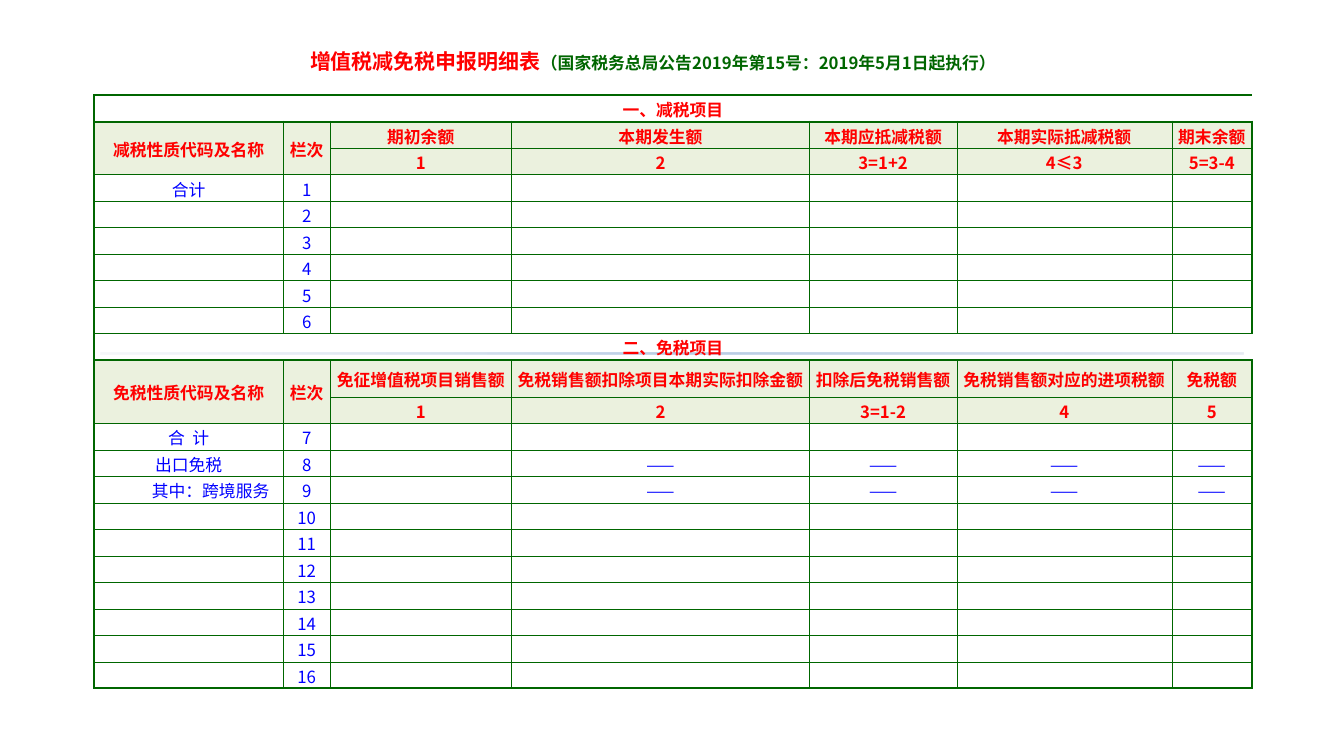
import pptx
import pptx.util
import pptx.dml.color
import pptx.enum.shapes
import pptx.enum.text
import pptx.oxml
import pptx.oxml.ns
from lxml import etree

TITLE = [
    ("增值税减免税申报明细表", "title", "red"),
    ("（国家税务总局公告2019年第15号：2019年5月1日起执行）", "body", "green"),
]
DASHES = ["", "——", "——", "——", "——"]
SECTIONS = [
    {
        "title": "一、减税项目",
        "labels": ["减税性质代码及名称", "栏次"],
        "heads": ["期初余额", "本期发生额", "本期应抵减税额", "本期实际抵减税额", "期末余额"],
        "formulas": ["1", "2", "3=1+2", "4≤3", "5=3-4"],
        "names": ["合计"],
        "values": {},
        "lines": range(1, 7),
    },
    {
        "title": "二、免税项目",
        "labels": ["免税性质代码及名称", "栏次"],
        "heads": ["免征增值税项目销售额", "免税销售额扣除项目本期实际扣除金额", "扣除后免税销售额",
                  "免税销售额对应的进项税额", "免税额"],
        "formulas": ["1", "2", "3=1-2", "4", "5"],
        "names": ["合  计", "出口免税", "其中：跨境服务"],
        "values": {8: DASHES, 9: DASHES},
        "lines": range(7, 17),
    },
]
INDENTS = {"其中：跨境服务": 44}

THEME = {
    "font": "Noto Sans CJK SC",
    "red": "FF0000", "green": "006600", "blue": "0000FF", "head": "EBF1DE",
    "rule": [(0, "D0D8E8", 20), (50, "4F81BD", 40), (100, "D0D8E8", 50)],
    "title": 15, "body": 12, "thin": 0.25, "thick": 1.5,
}

PX = 9080
SLIDE = (1343, 755)
RULE_BOX = (101, 352, 1142, 2)
TITLE_BOX = (236, 44, 833, 35)
TABLE_LEFT, TABLE_TOP, TABLE_HEIGHT = 94, 95, 593
COLUMNS = [189, 47, 181, 298, 147, 215, 80]
TALL_ROW = 37
MARGIN_X, MARGIN_TOP = 4, 2


def px(*lengths):
    return [pptx.util.Emu(round(n * PX)) for n in lengths]


def child(parent, tag, **attrs):
    return etree.SubElement(parent, pptx.oxml.ns.qn(tag), attrs)


def add_run(p, text, size, color, bold):
    r = p.add_run()
    r.text = text
    r.font.size = pptx.util.Pt(THEME[size])
    r.font.bold = bold
    r.font.color.rgb = pptx.dml.color.RGBColor.from_string(THEME[color])
    r.font.name = THEME["font"]
    child(r.font._element, "a:ea", typeface=THEME["font"])


def add_rule(s):
    sp = s.shapes.add_shape(pptx.enum.shapes.MSO_SHAPE.RECTANGLE, *px(*RULE_BOX))
    sp.shadow.inherit = False
    sp.line.fill.background()
    sp.fill.gradient()
    sp.fill.gradient_angle = 0
    stops = sp._element.spPr.find(".//" + pptx.oxml.ns.qn("a:gsLst"))
    for stop in list(stops):
        stops.remove(stop)
    for pos, color, alpha in THEME["rule"]:
        clr = child(child(stops, "a:gs", pos=str(pos * 1000)), "a:srgbClr", val=color)
        child(clr, "a:alpha", val=str(alpha * 1000))


def add_title(s):
    tf = s.shapes.add_textbox(*px(*TITLE_BOX)).text_frame
    tf.word_wrap = True
    tf.margin_top = tf.margin_bottom = 0
    tf.vertical_anchor = pptx.enum.text.MSO_ANCHOR.MIDDLE
    p = tf.paragraphs[0]
    p.alignment = pptx.enum.text.PP_ALIGN.CENTER
    for text, size, color in TITLE:
        add_run(p, text, size, color, True)


def table_rows():
    rows = []
    for sec in SECTIONS:
        rows.append(("title", [sec["title"]] + [""] * 6))
        rows.append(("head", sec["labels"] + sec["heads"]))
        rows.append(("formula", ["", ""] + sec["formulas"]))
        for i, line in enumerate(sec["lines"]):
            name = sec["names"][i] if i < len(sec["names"]) else ""
            rows.append(("data", [name, str(line)] + sec["values"].get(line, [""] * 5)))
    return rows


def set_borders(cell, kind, row, col, heavy_rows):
    tcPr = cell._tc.get_or_add_tcPr()
    last = len(COLUMNS)
    labels = col < 2
    edges = [
        ("a:lnL", col in (0, last), kind == "title" and col > 0),
        ("a:lnR", col + 1 == last, kind == "title" and col + 1 < last),
        ("a:lnT", row in heavy_rows, kind == "formula" and labels),
        ("a:lnB", row + 1 in heavy_rows, kind == "head" and labels),
    ]
    for tag, heavy, inside in edges:
        if not inside:
            width = pptx.util.Pt(THEME["thick" if heavy else "thin"])
            ln = child(tcPr, tag, w=str(width))
            child(child(ln, "a:solidFill"), "a:srgbClr", val=THEME["green"])


def fill_cell(cell, kind, text):
    cell.margin_left, cell.margin_right, cell.margin_top, cell.margin_bottom = px(
        MARGIN_X, MARGIN_X, MARGIN_TOP, 0)
    cell.vertical_anchor = pptx.enum.text.MSO_ANCHOR.MIDDLE
    if kind in ("head", "formula"):
        cell.fill.solid()
        cell.fill.fore_color.rgb = pptx.dml.color.RGBColor.from_string(THEME["head"])
    else:
        cell.fill.background()
    p = cell.text_frame.paragraphs[0]
    p.alignment = pptx.enum.text.PP_ALIGN.CENTER
    if text in INDENTS:
        p._p.get_or_add_pPr().set("marL", str(px(INDENTS[text])[0]))
    if text:
        data = kind == "data"
        add_run(p, text, "body", "blue" if data else "red", not data)
    else:
        end = child(p._p, "a:endParaRPr", sz=str(THEME["body"] * 100))
        child(end, "a:latin", typeface=THEME["font"])
        child(end, "a:ea", typeface=THEME["font"])


def add_form(s):
    rows = table_rows()
    titles = [i for i, (kind, _) in enumerate(rows) if kind == "title"]
    heavy_rows = {0, len(rows)} | {t + n for t in titles for n in (1, 3)}
    tall = titles[1] + 1
    row_height = (TABLE_HEIGHT - TALL_ROW) / (len(rows) - 1)

    frame = s.shapes.add_table(len(rows), len(COLUMNS),
                               *px(TABLE_LEFT, TABLE_TOP, sum(COLUMNS), TABLE_HEIGHT))
    table = frame.table
    table.first_row = table.horz_banding = False
    style = table._tbl.tblPr.find(pptx.oxml.ns.qn("a:tableStyleId"))
    style.text = "{2D5ABB26-0587-4C30-8999-92F81FD0307C}"
    for column, width in zip(table.columns, px(*COLUMNS)):
        column.width = width
    for i, (kind, texts) in enumerate(rows):
        table.rows[i].height = px(TALL_ROW if i == tall else row_height)[0]
        for j, text in enumerate(texts):
            cell = table.cell(i, j)
            set_borders(cell, kind, i, j, heavy_rows)
            fill_cell(cell, kind, text)
    for t in titles:
        table.cell(t, 0).merge(table.cell(t, len(COLUMNS) - 1))
        for j in range(2):
            table.cell(t + 1, j).merge(table.cell(t + 2, j))


def main():
    prs = pptx.Presentation()
    prs.slide_width, prs.slide_height = px(*SLIDE)
    s = prs.slides.add_slide(prs.slide_layouts[6])
    add_rule(s)
    add_title(s)
    add_form(s)
    prs.save("out.pptx")


if __name__ == "__main__":
    main()
